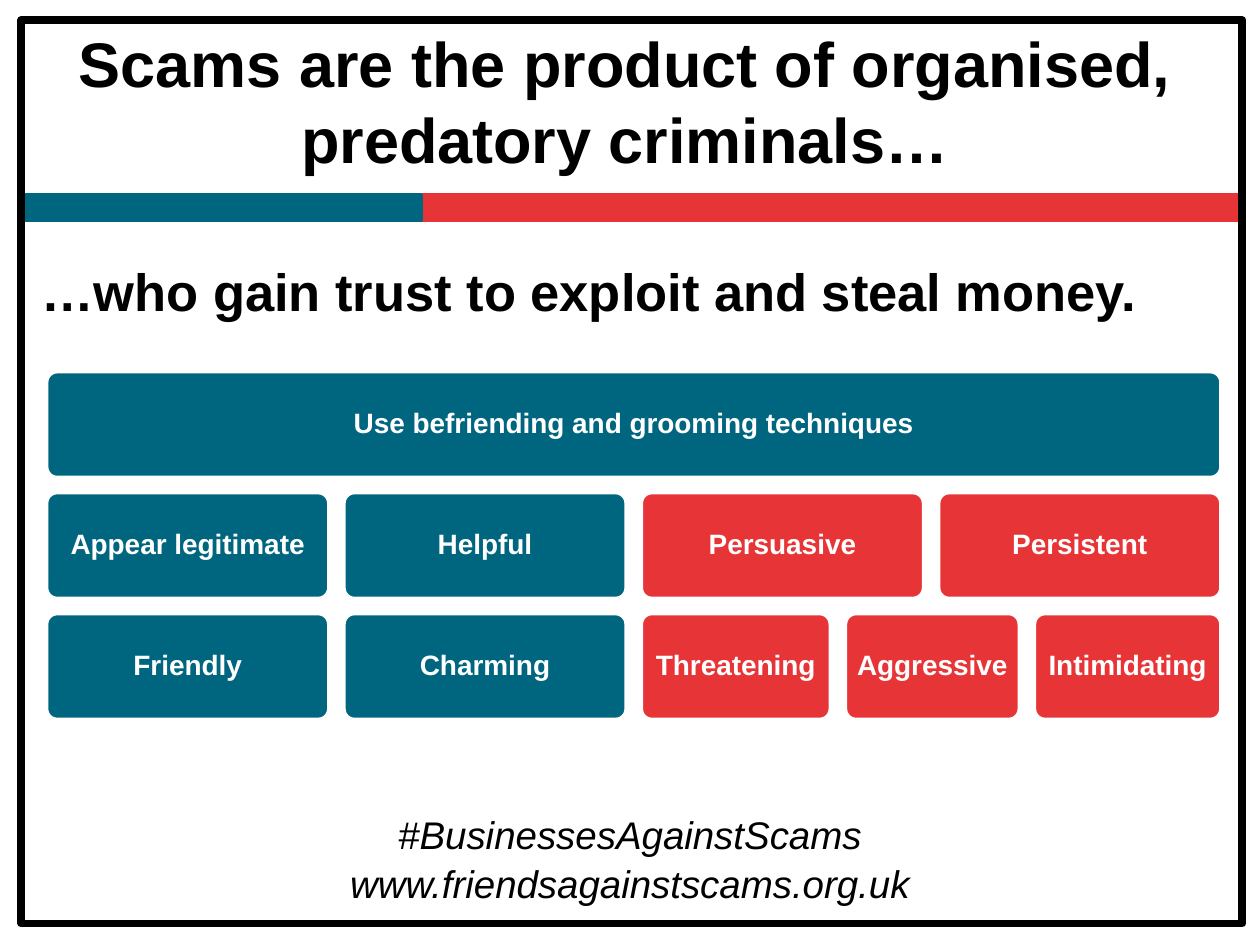
from pptx import Presentation
from pptx.dml.color import RGBColor
from pptx.enum.shapes import MSO_SHAPE as SHAPE
from pptx.enum.text import MSO_ANCHOR as ANCHOR, PP_ALIGN as ALIGN
from pptx.util import Inches, Pt

TEAL = RGBColor(0x00, 0x66, 0x80)
RED = RGBColor(0xE7, 0x34, 0x37)
BLACK = RGBColor(0, 0, 0)
WHITE = RGBColor(0xFF, 0xFF, 0xFF)

TITLE = "Scams are the product of organised, predatory criminals…"
SUBTITLE = "…who gain trust to exploit and steal money."
FOOTER = [("#BusinessesAgainstScams", 6.39), ("www.friendsagainstscams.org.uk", 6.78)]

# Rows of cards: label, width, colour
CARD_ROWS = [
    [("Use befriending and grooming techniques", 9.32, TEAL)],
    [("Appear legitimate", 2.24, TEAL), ("Helpful", 2.24, TEAL),
     ("Persuasive", 2.24, RED), ("Persistent", 2.24, RED)],
    [("Friendly", 2.24, TEAL), ("Charming", 2.24, TEAL),
     ("Threatening", 1.5, RED), ("Aggressive", 1.38, RED), ("Intimidating", 1.48, RED)],
]
CARDS_LEFT, CARDS_TOP, CARD_HEIGHT, GAP = 0.37, 2.95, 0.84, 0.12

TITLE_FONT = {"size": Pt(36), "bold": True}
SUBTITLE_FONT = {"size": Pt(30), "bold": True}
CARD_FONT = {"size": Pt(16), "bold": True}
FOOTER_FONT = {"size": Pt(22), "italic": True}


def write(sp, text, font, color=BLACK, align=ALIGN.CENTER, anchor=ANCHOR.MIDDLE):
    tf = sp.text_frame
    tf.word_wrap = True
    tf.vertical_anchor = anchor
    p = tf.paragraphs[0]
    p.alignment = align
    r = p.add_run()
    r.text = text
    r.font.name = "Arial"
    r.font.color.rgb = color
    for name, value in font.items():
        setattr(r.font, name, value)
    return tf


def add_box(slide, kind, box, fill, line, line_width):
    sp = slide.shapes.add_shape(kind, *map(Inches, box))
    sp.shadow.inherit = False
    if fill is None:
        sp.fill.background()
    else:
        sp.fill.solid()
        sp.fill.fore_color.rgb = fill
    sp.line.color.rgb = line
    sp.line.width = Pt(line_width)
    return sp


def add_text(slide, box, *args, **kwargs):
    write(slide.shapes.add_textbox(*map(Inches, box)), *args, **kwargs)


def add_card(slide, box, label, color):
    sp = add_box(slide, SHAPE.ROUNDED_RECTANGLE, box, color, WHITE, 2)
    sp.adjustments[0] = 0.1
    tf = write(sp, label, CARD_FONT, WHITE)
    tf.margin_left = tf.margin_right = Inches(0.05)
    tf.paragraphs[0].line_spacing = 0.9


def main():
    prs = Presentation()
    prs.slide_width, prs.slide_height = Inches(10), Inches(7.5)
    s = prs.slides.add_slide(prs.slide_layouts[6])

    add_box(s, SHAPE.RECTANGLE, (0.42, 1.55, 9.44, 0.2), RED, RED, 2)
    add_box(s, SHAPE.RECTANGLE, (0.17, 1.55, 3.17, 0.2), TEAL, TEAL, 2)
    add_box(s, SHAPE.RECTANGLE, (0.17, 0.16, 9.69, 7.17), None, BLACK, 4.5)

    add_text(s, (0.25, 0.17, 9.42, 1.25), TITLE, TITLE_FONT)
    add_text(s, (0.23, 2.01, 9.42, 0.83), SUBTITLE, SUBTITLE_FONT,
             align=ALIGN.LEFT, anchor=ANCHOR.TOP)
    for text, top in FOOTER:
        add_text(s, (0, top, 10, 0.47), text, FOOTER_FONT, anchor=ANCHOR.TOP)

    for i, row in enumerate(CARD_ROWS):
        left, top = CARDS_LEFT, CARDS_TOP + i * (CARD_HEIGHT + GAP)
        for label, width, color in row:
            add_card(s, (left, top, width, CARD_HEIGHT), label, color)
            left += width + GAP

    prs.save("out.pptx")


if __name__ == "__main__":
    main()
